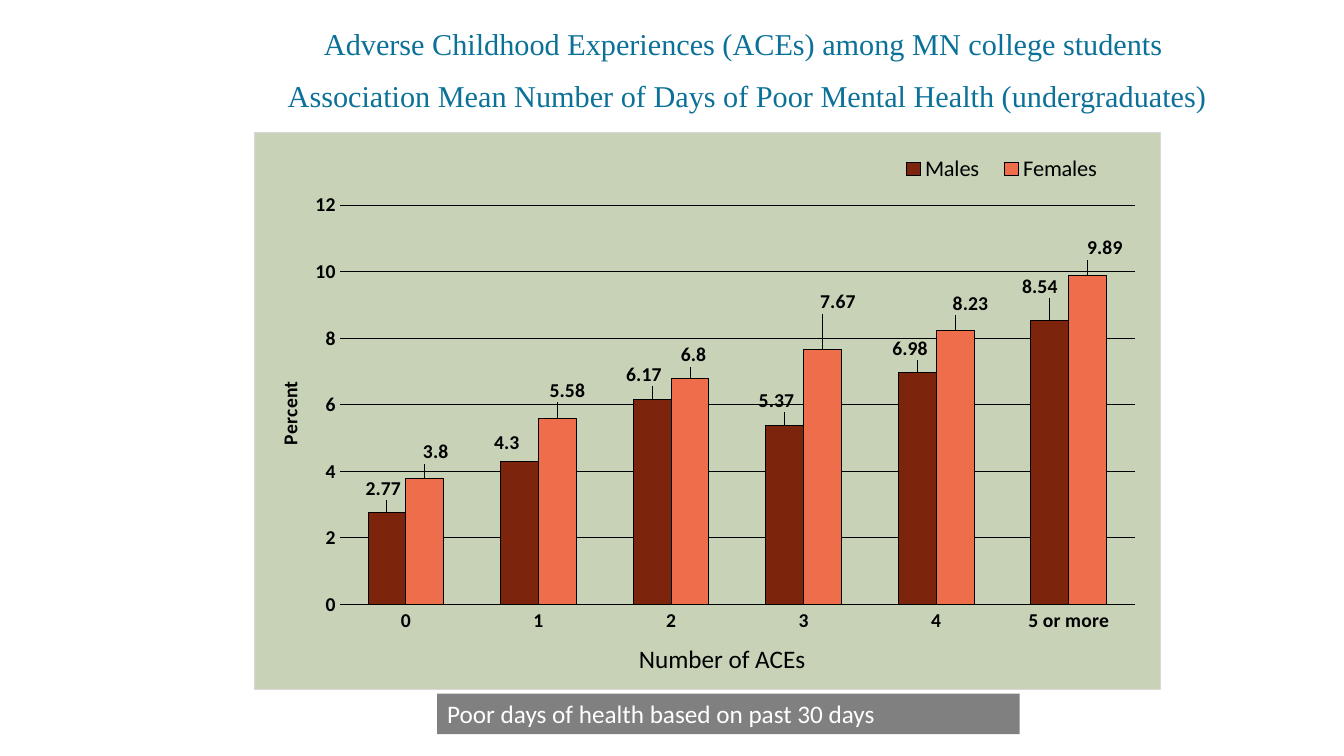
from lxml import etree
from pptx import Presentation, util as u
from pptx.chart.data import CategoryChartData
from pptx.dml.color import RGBColor
from pptx.enum import chart as ch, shapes, text
from pptx.oxml.ns import qn

COLORS = {"title": "0C7199", "black": "000000", "white": "FFFFFF", "note": "808080",
          "panel": "C7D2B7", "border": "D9D9D9", "Males": "7C240C", "Females": "EE6E4B"}
TITLE = ("Adverse Childhood Experiences (ACEs) among MN college students \v"
         "Association Mean Number of Days of Poor Mental Health (undergraduates)")
AXIS_LABEL = "Number of ACEs"
NOTE = "Poor days of health based on past 30 days"
CATEGORIES = ["0", "1", "2", "3", "4", "5 or more"]
SERIES = {"Males": [2.77, 4.3, 6.17, 5.37, 6.98, 8.54],
          "Females": [3.8, 5.58, 6.8, 7.67, 8.23, 9.89]}
LABEL_SHIFTS = {
    "Males": [(-0.4, -1.4), (-1.4, -0.5), (-0.9, -1.6), (-0.9, -1.6), (-0.8, -1.4), (-1.1, -3.2)],
    "Females": [(1.2, -1.8), (1.1, -2.2), (0.4, -1.3), (1.7, -5.6), (1.7, -2), (1.9, -2)]}
BOXES = {"title": (5.51, 0.43, 26.64, 2.57), "chart": (6.4, 3.33, 22.86, 14.07),
         "axis": (15.85, 16.08, 10.97, 1.02), "note": (11.02, 17.48, 14.68, 1.02)}


def box(name):
    return [u.Cm(v) for v in BOXES[name]]


def rgb(name):
    return RGBColor.from_string(COLORS[name])


def style(font, size, color="black", name="Calibri", bold=False):
    font.size, font.name, font.bold = u.Pt(size), name, bold
    font.color.rgb = rgb(color)


def write(tf, words, align=text.PP_ALIGN.LEFT, spacing=None, anchor=text.MSO_ANCHOR.TOP, **fmt):
    tf.word_wrap = True
    tf.auto_size = text.MSO_AUTO_SIZE.NONE
    tf.vertical_anchor = anchor
    p = tf.paragraphs[0]
    p.alignment = align
    if spacing:
        p.line_spacing = u.Pt(spacing)
    for i, line in enumerate(words.split("\v")):
        if i:
            p.add_line_break()
        r = p.add_run()
        r.text = line
        style(r.font, **fmt)


def place(parent, before, **values):
    for old in parent.findall(qn("c:layout")):
        parent.remove(old)
    layout = etree.Element(qn("c:layout"))
    manual = etree.SubElement(layout, qn("c:manualLayout"))
    for key, value in values.items():
        etree.SubElement(manual, qn("c:" + key)).set("val", str(value))
    parent.insert(before, layout)


def outline(line, color):
    line.color.rgb = rgb(color)
    line.width = u.Pt(0.75)


def add_bars(s):
    data = CategoryChartData()
    data.categories = CATEGORIES
    for name, values in SERIES.items():
        data.add_series(name, values)
    chart = s.shapes.add_chart(ch.XL_CHART_TYPE.COLUMN_CLUSTERED, *box("chart"), data).chart
    style(chart.font, 10)
    chart.has_title = False

    root = chart._chartSpace
    panel = etree.Element(qn("c:spPr"))
    fill = etree.SubElement(panel, qn("a:solidFill"))
    etree.SubElement(fill, qn("a:srgbClr")).set("val", COLORS["panel"])
    ln = etree.SubElement(panel, qn("a:ln"), w=str(u.Pt(0.75)))
    fill = etree.SubElement(ln, qn("a:solidFill"))
    etree.SubElement(fill, qn("a:srgbClr")).set("val", COLORS["border"])
    root.find(qn("c:chart")).addnext(panel)
    place(root.find(".//" + qn("c:plotArea")), 0, layoutTarget="inner", xMode="edge",
          yMode="edge", x=0.094, y=0.13, w=0.878, h=0.717)

    chart.has_legend = True
    legend = chart.legend
    legend.position = ch.XL_LEGEND_POSITION.TOP
    legend.include_in_layout = False
    style(legend.font, 16)
    place(legend._element, 1, xMode="edge", yMode="edge", x=0.7, y=0.03, w=0.25, h=0.07)

    for axis in (chart.category_axis, chart.value_axis):
        axis.major_tick_mark = axis.minor_tick_mark = ch.XL_TICK_MARK.NONE
        axis.format.line.fill.background()
        style(axis.tick_labels.font, 14, bold=True)
    axis.minimum_scale, axis.maximum_scale, axis.major_unit = 0, 12, 2
    outline(axis.major_gridlines.format.line, "black")
    tf = axis.axis_title.text_frame
    r = tf.paragraphs[0].add_run()
    r.text = "Percent"
    style(r.font, 14, bold=True)
    tf._txBody.find(qn("a:bodyPr")).set("rot", "-5400000")
    place(axis.axis_title._element, 1, xMode="edge", yMode="edge", x=0.02, y=0.44)

    plot = chart.plots[0]
    plot.gap_width, plot.overlap, plot.vary_by_categories = 150, 0, False
    for series in plot.series:
        series.format.fill.solid()
        series.format.fill.fore_color.rgb = rgb(series.name)
        outline(series.format.line, "black")
        labels = series.data_labels
        labels.show_value = True
        labels.position = ch.XL_LABEL_POSITION.OUTSIDE_END
        style(labels.font, 14, bold=True)
        for i in range(len(CATEGORIES)):
            label = series.points[i].data_label
            style(label.font, 14, bold=True)
            label.position = ch.XL_LABEL_POSITION.OUTSIDE_END
        shifts = LABEL_SHIFTS[series.name]
        for item, (dx, dy) in zip(series._element.iter(qn("c:dLbl")), shifts):
            place(item, 1, x=dx / 100, y=dy / 100)


def main():
    prs = Presentation()
    prs.slide_width, prs.slide_height = u.Cm(33.87), u.Cm(19.05)
    s = prs.slides.add_slide(prs.slide_layouts[5])
    title = s.shapes.title
    title.left, title.top, title.width, title.height = box("title")
    write(title.text_frame, TITLE, align=text.PP_ALIGN.CENTER, spacing=37.5,
          anchor=text.MSO_ANCHOR.BOTTOM, size=21.6, color="title", name="Times New Roman")
    add_bars(s)
    write(s.shapes.add_textbox(*box("axis")).text_frame, AXIS_LABEL, size=18)
    sp = s.shapes.add_shape(shapes.MSO_SHAPE.RECTANGLE, *box("note"))
    sp.shadow.inherit = False
    sp.fill.solid()
    sp.fill.fore_color.rgb = rgb("note")
    sp.line.fill.background()
    write(sp.text_frame, NOTE, size=18, color="white")
    prs.save("out.pptx")


if __name__ == "__main__":
    main()
